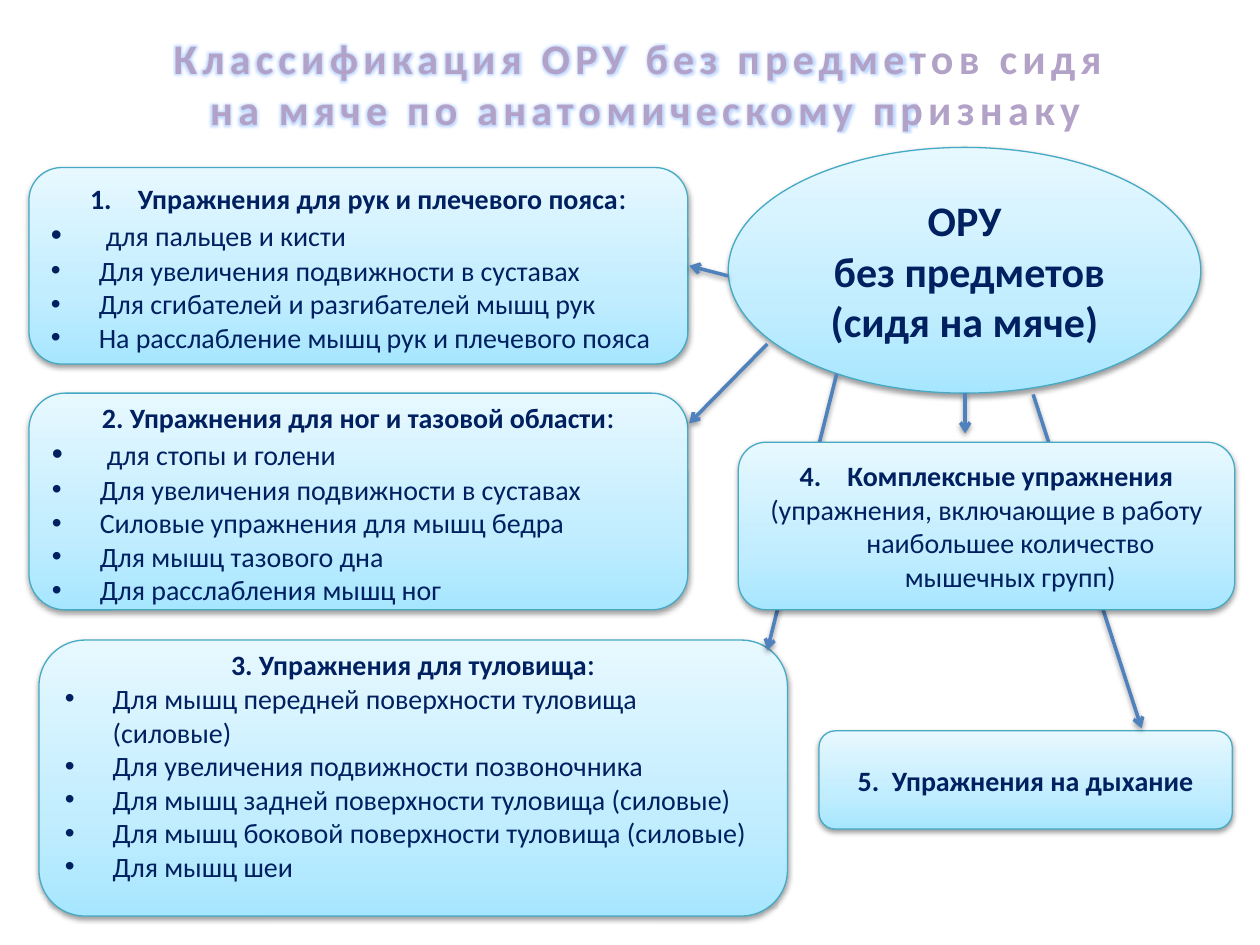
import pptx
import pptx.util
import pptx.dml.color
import pptx.enum.shapes
import pptx.enum.text
import pptx.oxml
import pptx.oxml.ns
from lxml import etree

Inches = pptx.util.Inches
Pt = pptx.util.Pt
SHAPE = pptx.enum.shapes.MSO_SHAPE
ALIGN = pptx.enum.text.PP_ALIGN
NS = pptx.oxml.ns.nsdecls("a")

COLORS = {
    "text": "002060", "title": "B3A2C7", "title_edge": "403152", "glow": "4A90FF",
    "border": "46AAC5", "arrow": "4F81BD", "shadow": "000000",
    "low": "A7E6FF", "mid": "C1EDFF", "high": "E7F8FF",
}
STOPS = [(0, "low"), (35, "mid"), (100, "high")]
INDENT = 0.38

CARDS = [
    ((0.23, 1.33, 5.23, 1.56), "Упражнения для рук и плечевого пояса", 1, 0.05, [
        "для пальцев и кисти",
        "Для увеличения подвижности в суставах",
        "Для сгибателей и разгибателей мышц рук",
        "На расслабление мышц рук и плечевого пояса"]),
    ((0.23, 3.12, 5.23, 1.72), "2. Упражнения для ног и тазовой области", None, 0.05, [
        "для стопы и голени",
        "Для увеличения подвижности в суставах",
        "Силовые упражнения для мышц бедра",
        "Для мышц тазового дна",
        "Для расслабления мышц ног"]),
    ((0.31, 5.08, 5.94, 2.19), "3. Упражнения для туловища", None, 0.28, [
        "Для мышц передней поверхности туловища (силовые)",
        "Для увеличения подвижности позвоночника",
        "Для мышц задней поверхности туловища (силовые)",
        "Для мышц боковой поверхности туловища (силовые)",
        "Для мышц шеи"]),
]
ARROWS = [
    (5.78, 2.19, 5.47, 2.11), (6.09, 2.73, 5.47, 3.36), (6.64, 2.97, 6.09, 5.16),
    (7.66, 3.12, 7.66, 3.44), (8.2, 3.13, 9.06, 5.78),
]


def rgb(name):
    return pptx.dml.color.RGBColor.from_string(COLORS[name])


def add_run(p, text, size=16, bold=False, color="text"):
    r = p.add_run()
    r.text = text
    r.font.name = "Calibri"
    r.font.size = Pt(size)
    r.font.bold = bold
    r.font.color.rgb = rgb(color)
    return r


def add_shadow(sp):
    sp_pr = sp._element.spPr
    for old in sp_pr.findall(pptx.oxml.ns.qn("a:effectLst")):
        sp_pr.remove(old)
    sp_pr.append(pptx.oxml.parse_xml(
        f'<a:effectLst {NS}><a:outerShdw blurRad="40000" dist="20000" dir="5400000" '
        f'rotWithShape="0"><a:srgbClr val="{COLORS["shadow"]}"><a:alpha val="38000"/>'
        '</a:srgbClr></a:outerShdw></a:effectLst>'))


def add_panel(s, box, kind):
    sp = s.shapes.add_shape(kind, *map(Inches, box))
    sp.line.color.rgb = rgb("border")
    sp.line.width = Pt(0.75)
    stops = "".join(f'<a:gs pos="{pos * 1000}"><a:srgbClr val="{COLORS[name]}"/></a:gs>'
                    for pos, name in STOPS)
    sp._element.spPr.find(pptx.oxml.ns.qn("a:prstGeom")).addnext(pptx.oxml.parse_xml(
        f'<a:gradFill {NS} rotWithShape="1"><a:gsLst>{stops}</a:gsLst>'
        '<a:lin ang="16200000" scaled="0"/></a:gradFill>'))
    add_shadow(sp)
    tf = sp.text_frame
    tf.word_wrap = True
    tf.vertical_anchor = pptx.enum.text.MSO_ANCHOR.MIDDLE
    return tf


def add_paragraph(tf, align=ALIGN.LEFT, indent=INDENT, bullet=False, number=None):
    p = tf.paragraphs[0] if not tf.paragraphs[0].runs else tf.add_paragraph()
    p.alignment = align
    p_pr = p._p.get_or_add_pPr()
    if indent:
        p_pr.set("marL", str(Inches(indent)))
        p_pr.set("indent", str(-Inches(indent)))
    if bullet:
        etree.SubElement(p_pr, pptx.oxml.ns.qn("a:buFont"), typeface="Arial")
        etree.SubElement(p_pr, pptx.oxml.ns.qn("a:buChar"), char="•")
    if number:
        etree.SubElement(p_pr, pptx.oxml.ns.qn("a:buFont"), typeface="+mj-lt")
        etree.SubElement(p_pr, pptx.oxml.ns.qn("a:buAutoNum"), type="arabicPeriod",
                         startAt=str(number))
    return p


def add_title(s, box):
    tf = s.shapes.add_textbox(*map(Inches, box)).text_frame
    tf.word_wrap = False
    tf.auto_size = pptx.enum.text.MSO_AUTO_SIZE.SHAPE_TO_FIT_TEXT
    for text in ("Классификация ОРУ без предметов сидя", " на мяче по анатомическому признаку"):
        r = add_run(add_paragraph(tf, ALIGN.CENTER, 0), text, 24, True, "title")
        r_pr = r.font._element
        r_pr.set("spc", "300")
        r_pr.insert(0, pptx.oxml.parse_xml(
            f'<a:ln {NS} w="11430"><a:solidFill><a:srgbClr val="{COLORS["title_edge"]}"/>'
            '</a:solidFill></a:ln>'))
        r_pr.find(pptx.oxml.ns.qn("a:solidFill")).addnext(pptx.oxml.parse_xml(
            f'<a:effectLst {NS}><a:glow rad="45500"><a:srgbClr val="{COLORS["glow"]}">'
            '<a:alpha val="35000"/></a:srgbClr></a:glow></a:effectLst>'))


def add_hub(s, box):
    tf = add_panel(s, box, SHAPE.OVAL)
    for text in ("ОРУ", " без предметов (сидя на мяче)"):
        add_run(add_paragraph(tf, ALIGN.CENTER, 0), text, 24, True)


def add_list_card(s, box, heading, number, bottom, items):
    tf = add_panel(s, box, SHAPE.ROUNDED_RECTANGLE)
    tf.margin_bottom = Inches(bottom)
    p = add_paragraph(tf, ALIGN.CENTER, number=number)
    add_run(p, heading, bold=True)
    add_run(p, ":", 18)
    for item in items:
        p = add_paragraph(tf, bullet=True)
        if item[0].islower():
            add_run(p, " ", 18)
        add_run(p, item)


def add_note_card(s, box, heading, number=None, note=None):
    tf = add_panel(s, box, SHAPE.ROUNDED_RECTANGLE)
    add_run(add_paragraph(tf, ALIGN.CENTER, number=number), heading, bold=True)
    if note:
        add_run(add_paragraph(tf, ALIGN.CENTER), note)


def add_arrow(s, ends):
    c = s.shapes.add_connector(pptx.enum.shapes.MSO_CONNECTOR.STRAIGHT, *map(Inches, ends))
    c.line.color.rgb = rgb("arrow")
    c.line.width = Pt(2)
    etree.SubElement(c.line._get_or_add_ln(), pptx.oxml.ns.qn("a:tailEnd"), type="arrow")
    add_shadow(c)


def main():
    prs = pptx.Presentation()
    prs.slide_width, prs.slide_height = Inches(10), Inches(7.5)
    s = prs.slides.add_slide(prs.slide_layouts[6])
    add_title(s, (1.22, 0.21, 7.69, 0.91))
    add_hub(s, (5.78, 1.17, 3.75, 1.95))
    for card in CARDS:
        add_list_card(s, *card)
    add_note_card(s, (6.5, 5.8, 3.28, 0.78), "5.  Упражнения на дыхание")
    for ends in ARROWS:
        add_arrow(s, ends)
    add_note_card(s, (5.86, 3.51, 3.94, 1.33), "Комплексные упражнения", 4,
                  "(упражнения, включающие в работу наибольшее количество мышечных групп)")
    prs.save("out.pptx")


if __name__ == "__main__":
    main()
